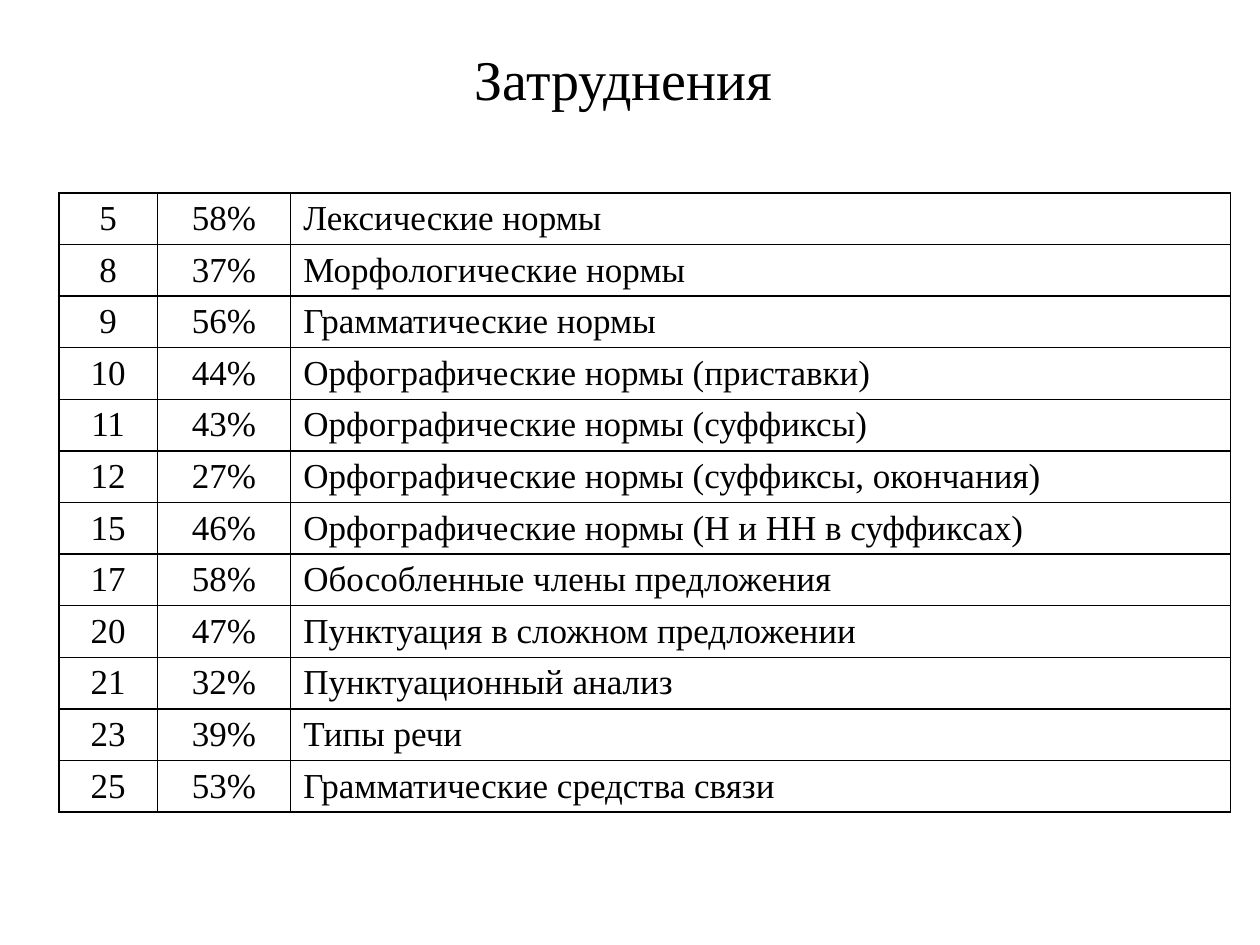
"""Build a slide listing the exam tasks that cause difficulties."""
from lxml.etree import SubElement
from pptx import Presentation
from pptx.dml.color import RGBColor
from pptx.enum.text import MSO_ANCHOR as Anchor, PP_ALIGN as Align
from pptx.oxml.ns import qn
from pptx.util import Cm, Pt

TITLE = "Затруднения"
DIFFICULTIES = [
    (5, 58, "Лексические нормы"),
    (8, 37, "Морфологические нормы"),
    (9, 56, "Грамматические нормы"),
    (10, 44, "Орфографические нормы (приставки)"),
    (11, 43, "Орфографические нормы (суффиксы)"),
    (12, 27, "Орфографические нормы (суффиксы, окончания)"),
    (15, 46, "Орфографические нормы (Н и НН в суффиксах)"),
    (17, 58, "Обособленные члены предложения"),
    (20, 47, "Пунктуация в сложном предложении"),
    (21, 32, "Пунктуационный анализ"),
    (23, 39, "Типы речи"),
    (25, 53, "Грамматические средства связи"),
]
COLUMNS = [(1.98, Align.CENTER), (2.69, Align.CENTER), (18.95, Align.LEFT)]
ROW_HEIGHT = 1.04
FONT = "Times New Roman"
BLACK = RGBColor(0, 0, 0)


def write_text(text_frame, text, size, align):
    paragraph = text_frame.paragraphs[0]
    paragraph.alignment = align
    run = paragraph.add_run()
    run.text = text
    run.font.name = FONT
    run.font.size = Pt(size)
    run.font.color.rgb = BLACK


def add_borders(cell, width=1):
    properties = cell._tc.get_or_add_tcPr()
    for side in ("a:lnL", "a:lnR", "a:lnT", "a:lnB"):
        line = SubElement(properties, qn(side), w=str(Pt(width)))
        fill = SubElement(line, qn("a:solidFill"))
        SubElement(fill, qn("a:srgbClr"), val=str(BLACK))


def add_title(slide):
    title = slide.shapes.title
    title.left, title.top = Cm(1.78), Cm(0.58)
    title.width, title.height = Cm(21.59), Cm(1.98)
    title.text_frame.vertical_anchor = Anchor.MIDDLE
    write_text(title.text_frame, TITLE, 32, Align.CENTER)


def add_difficulties(slide):
    width = sum(column_width for column_width, _ in COLUMNS)
    frame = slide.shapes.add_table(
        len(DIFFICULTIES), len(COLUMNS), Cm(1.19), Cm(3.89),
        Cm(width), Cm(ROW_HEIGHT * len(DIFFICULTIES)))
    table = frame.table
    table.first_row = table.horz_banding = False
    for column, (column_width, _) in zip(table.columns, COLUMNS):
        column.width = Cm(column_width)
    for row, (task, percent, topic) in zip(table.rows, DIFFICULTIES):
        row.height = Cm(ROW_HEIGHT)
        texts = (str(task), f"{percent}%", topic)
        for cell, text, (_, align) in zip(row.cells, texts, COLUMNS):
            write_text(cell.text_frame, text, 20, align)
            add_borders(cell)
            cell.fill.background()


def main():
    presentation = Presentation()
    presentation.slide_width, presentation.slide_height = Cm(25.4), Cm(19.05)
    slide = presentation.slides.add_slide(presentation.slide_layouts[5])
    add_title(slide)
    add_difficulties(slide)
    presentation.save("out.pptx")


if __name__ == "__main__":
    main()
